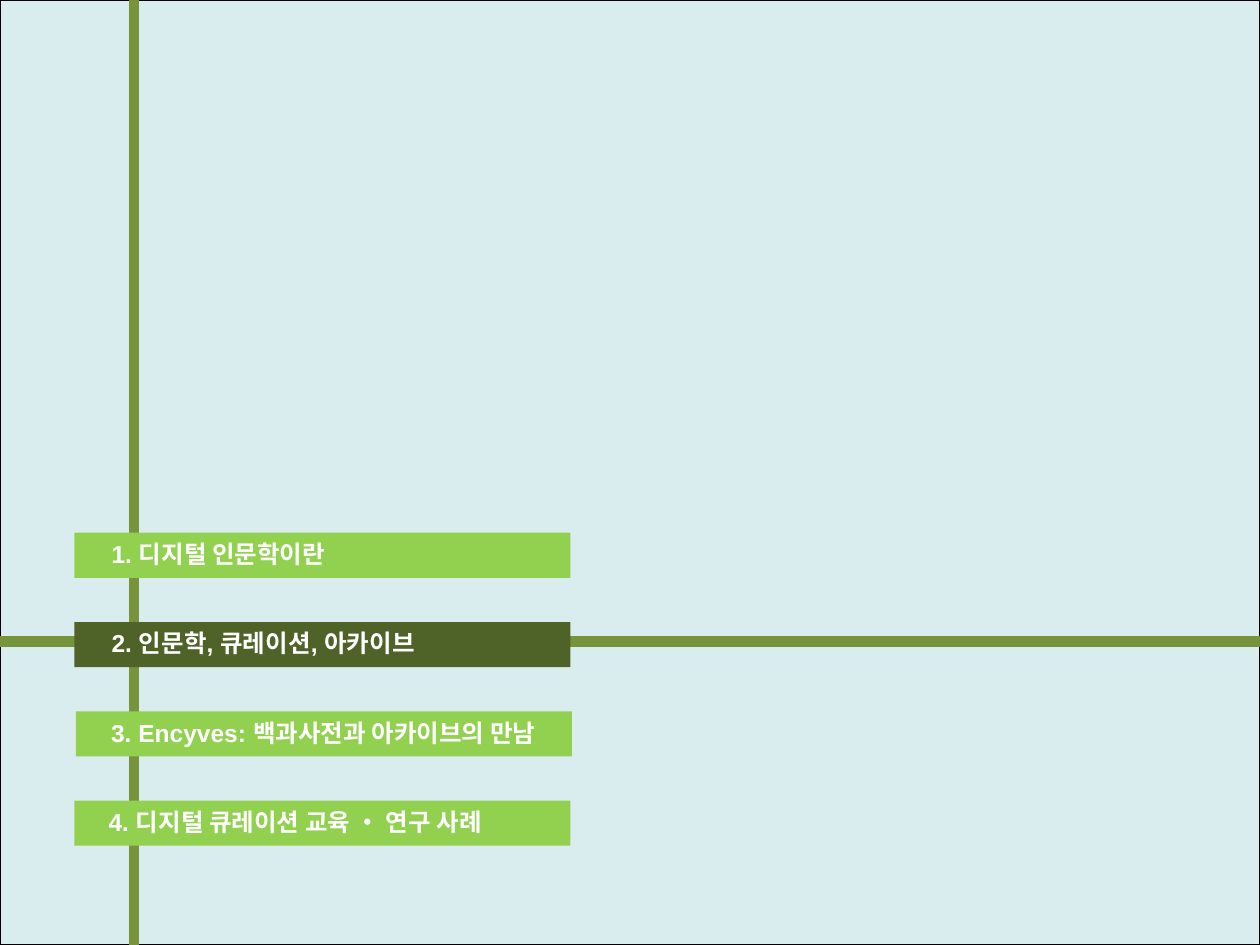
from lxml import etree
from pptx import Presentation
from pptx import util as u
from pptx.dml import color
from pptx.enum import shapes, text
from pptx.oxml import ns

HUES = {
    "back": "D9EDEF",
    "edge": "000000",
    "rule": "77933C",
    "bar": "92D050",
    "now": "4F6228",
    "text": "FFFFFF",
}
WIDE, HIGH = 25.4, 19.05
TOP, STEP = 10.74, 1.8
ITEMS = [
    ("1. 디지털 인문학이란", 1.5, 2.0, 8.5),
    ("2. 인문학, 큐레이션, 아카이브", 1.5, 2.0, 8.1),
    ("3. Encyves: 백과사전과 아카이브의 만남", 1.53, 1.99, 9.92),
    ("4. 디지털 큐레이션 교육 • 연구 사례", 1.5, 1.94, 9.54),
]
ACTIVE = 1


def hue(name):
    return color.RGBColor.from_string(HUES[name])


def write(para, words, size=14, face="Arial", tint="text", bold=True):
    run = para.add_run()
    run.text = words
    run.font.size = u.Pt(size)
    run.font.name = face
    run.font.bold = bold
    run.font.color.rgb = hue(tint)


class Page:
    def __init__(self, slide):
        self.items = slide.shapes

    def rect(self, x, y, w, h, fill, edge=None):
        box = self.items.add_shape(
            shapes.MSO_SHAPE.RECTANGLE, u.Cm(x), u.Cm(y), u.Cm(w), u.Cm(h))
        box.shadow.inherit = False
        box.fill.solid()
        box.fill.fore_color.rgb = hue(fill)
        if edge:
            box.line.color.rgb = hue(edge)
            box.line.width = u.Pt(0.75)
        else:
            box.line.fill.background()

    def line(self, x1, y1, x2, y2):
        rule = self.items.add_connector(
            shapes.MSO_CONNECTOR.STRAIGHT,
            u.Cm(x1), u.Cm(y1), u.Cm(x2), u.Cm(y2))
        rule.line.color.rgb = hue("rule")
        rule.line.width = u.Pt(6)
        etree.SubElement(rule._element.spPr, ns.qn("a:effectLst"))

    def label(self, x, y, w, h, words):
        frame = self.items.add_textbox(
            u.Cm(x), u.Cm(y), u.Cm(w), u.Cm(h)).text_frame
        frame.word_wrap = True
        frame.auto_size = text.MSO_AUTO_SIZE.SHAPE_TO_FIT_TEXT
        write(frame.paragraphs[0], words)


def main():
    deck = Presentation()
    deck.slide_width, deck.slide_height = u.Cm(WIDE), u.Cm(HIGH)
    page = Page(deck.slides.add_slide(deck.slide_layouts[6]))
    page.rect(0, 0, WIDE, HIGH, "back", edge="edge")
    page.line(2.7, HIGH, 2.7, 0)
    page.line(0, 12.93, WIDE, 12.93)
    for i, (words, left, start, width) in enumerate(ITEMS):
        y = TOP + i * STEP
        page.rect(left, y, 10, 0.91, "now" if i == ACTIVE else "bar")
        page.label(start, y, width, 0.86, words)
    deck.save("out.pptx")


if __name__ == "__main__":
    main()
